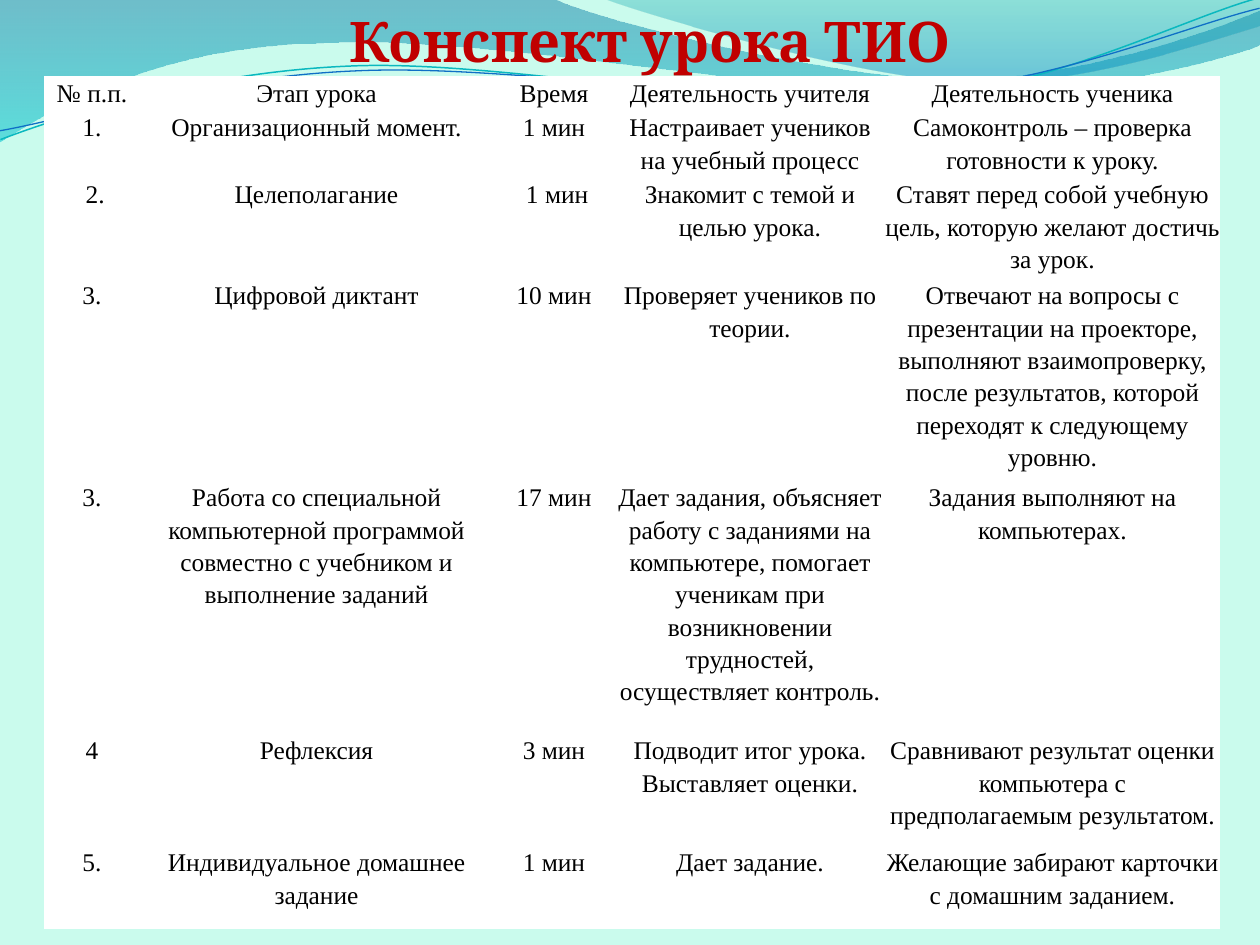
from pptx import Presentation
from pptx.dml.color import RGBColor
from pptx.enum.text import MSO_ANCHOR, MSO_AUTO_SIZE, PP_ALIGN
from pptx.oxml.ns import qn
from pptx.util import Pt
from lxml.etree import SubElement

UNIT = 914400 / 126
PLAIN = "{2D5ABB26-0587-4C30-8999-92F81FD0307C}"

TITLE = "Конспект урока ТИО"
COLS = [96, 353, 122, 270, 335]
ROWS = [
    (34, ["№ п.п.", "Этап урока", "Время", "Деятельность учителя", "Деятельность ученика"]),
    (67, ["1.", "Организационный момент.", "1 мин",
          "Настраивает учеников на учебный процесс",
          "Самоконтроль – проверка готовности к уроку."]),
    (101, [" 2.", "Целеполагание", " 1 мин",
           "Знакомит с темой и целью урока.",
           "Ставят перед собой учебную цель, которую желают достичь за урок."]),
    (202, ["3.", "Цифровой диктант", "10 мин",
           "Проверяет учеников по теории.",
           "Отвечают на вопросы с презентации на проекторе, выполняют взаимопроверку, "
           "после результатов, которой переходят к следующему уровню."]),
    (253, ["3.", "Работа со специальной компьютерной программой совместно с учебником "
           "и выполнение заданий", "17 мин",
           "Дает задания, объясняет работу с заданиями на компьютере, помогает ученикам "
           "при возникновении трудностей, осуществляет контроль.",
           "Задания выполняют на компьютерах."]),
    (112, ["4", "Рефлексия", "3 мин",
           "Подводит итог урока. Выставляет оценки.",
           "Сравнивают результат оценки компьютера с предполагаемым результатом."]),
    (84, ["5.", "Индивидуальное домашнее задание", "1 мин", "Дает задание.",
          "Желающие забирают карточки с домашним заданием."]),
]
WAVES = [
    ([(0, 0), (554, -1), (599, 21, 837, 79, 955, 79), (1075, 79, 1207, 33, 1260, 11),
      (1261, 45), (1239, 55, 1096, 96, 940, 94), (784, 94, 481, 35, 324, 43),
      (163, 45, 58, 105, -1, 142), (0, 0)],
     [(0, "0074A1", 45), (1, "00C6CF", 55)]),
    ([(604, -1), (641, 14, 859, 78, 969, 82), (1079, 87, 1211, 40, 1260, 26),
      (1260, 0), (604, -1)],
     [(0, "00A1A9", 30), (0.8, "008BBF", 45)]),
]
LINES = [
    ([(-2, 110), (58, 90, 199, 52, 350, 53), (499, 53, 745, 117, 896, 114),
      (1049, 109, 1184, 45, 1260, 28)], "0AB8BF", 0.85),
    ([(-2, 101), (57, 94, 207, 57, 357, 58), (509, 58, 750, 112, 902, 107),
      (1052, 104, 1188, 52, 1262, 38)], "0F6FC6", 0.75),
]
TILT = 357.3
HEAD = {"name": "Cambria", "size": Pt(32), "bold": True}
BODY = {"name": "Times New Roman", "size": Pt(14.5), "bold": False}
PARA = {"alignment": PP_ALIGN.CENTER, "line_spacing": 1.15, "space_after": Pt(10)}
FLUSH = dict.fromkeys(["margin_left", "margin_right", "margin_top", "margin_bottom"], 0)
FRAME = {"word_wrap": True, "vertical_anchor": MSO_ANCHOR.TOP,
         "auto_size": MSO_AUTO_SIZE.SHAPE_TO_FIT_TEXT}


def px(num):
    return round(num * UNIT)


def tint(code):
    return RGBColor.from_string(code)


def apply(item, props):
    for key, value in props.items():
        setattr(item, key, value)


def paint(font, props, code):
    apply(font, props)
    font.color.rgb = tint(code)


def bend(shape, path):
    legs = iter(list(shape.element.iter(qn("a:lnTo"))))
    for part in path[1:]:
        group = [next(legs) for pair in range(len(part) // 2)]
        if len(group) == 3:
            curve = group[0].makeelement(qn("a:cubicBezTo"))
            group[0].addprevious(curve)
            for leg in group:
                curve.append(leg[0])
                leg.getparent().remove(leg)


def draw(slide, path, close):
    dots = [(px(part[i]), px(part[i + 1])) for part in path
            for i in range(0, len(part), 2)]
    pen = slide.shapes.build_freeform(*dots[0], scale=1.0)
    pen.add_line_segments(dots[1:], close=close)
    shape = pen.convert_to_shape()
    shape.shadow.inherit = False
    bend(shape, path)
    return shape


def add_wave(slide, path, stops):
    shape = draw(slide, path, True)
    shape.line.fill.background()
    shape.fill.gradient()
    shape.fill.gradient_angle = 270
    for stop, (place, code, alpha) in zip(shape.fill.gradient_stops, stops):
        stop.position = place
        stop.color.rgb = tint(code)
    for node, (place, code, alpha) in zip(shape.element.iter(qn("a:gs")), stops):
        SubElement(node[0], qn("a:alpha")).set("val", str(alpha * 1000))


def add_line(slide, path, code, width):
    shape = draw(slide, path, False)
    shape.rotation = TILT
    shape.fill.background()
    shape.line.color.rgb = tint(code)
    shape.line.width = Pt(width)


def add_plan(slide):
    high = sum(row[0] for row in ROWS)
    frame = slide.shapes.add_table(len(ROWS), len(COLS), px(44), px(76),
                                   px(sum(COLS)), px(high))
    table = frame.table
    apply(table, {"first_row": False, "horz_banding": False})
    for style in frame.element.iter(qn("a:tableStyleId")):
        style.text = PLAIN
    for col, width in zip(table.columns, COLS):
        col.width = px(width)
    for row, (height, texts) in zip(table.rows, ROWS):
        row.height = px(height)
        for cell, text in zip(row.cells, texts):
            cell.text = text
            apply(cell, FLUSH)
            cell.fill.solid()
            cell.fill.fore_color.rgb = tint("FFFFFF")
            para = cell.text_frame.paragraphs[0]
            apply(para, PARA)
            paint(para.runs[0].font, BODY, "000000")


def add_title(slide):
    title = slide.shapes.title
    apply(title, {"left": px(164), "top": 0, "width": px(973), "height": px(81)})
    title.text = TITLE
    apply(title.text_frame, FRAME)
    para = title.text_frame.paragraphs[0]
    para.alignment = PP_ALIGN.CENTER
    paint(para.runs[0].font, HEAD, "C00000")
    title.element.getparent().append(title.element)


def main():
    deck = Presentation()
    apply(deck, {"slide_width": px(1260), "slide_height": px(945)})
    slide = deck.slides.add_slide(deck.slide_layouts[5])
    slide.background.fill.solid()
    slide.background.fill.fore_color.rgb = tint("CAFBED")
    for wave in WAVES:
        add_wave(slide, *wave)
    for line in LINES:
        add_line(slide, *line)
    add_plan(slide)
    add_title(slide)
    deck.save("out.pptx")


if __name__ == "__main__":
    main()
